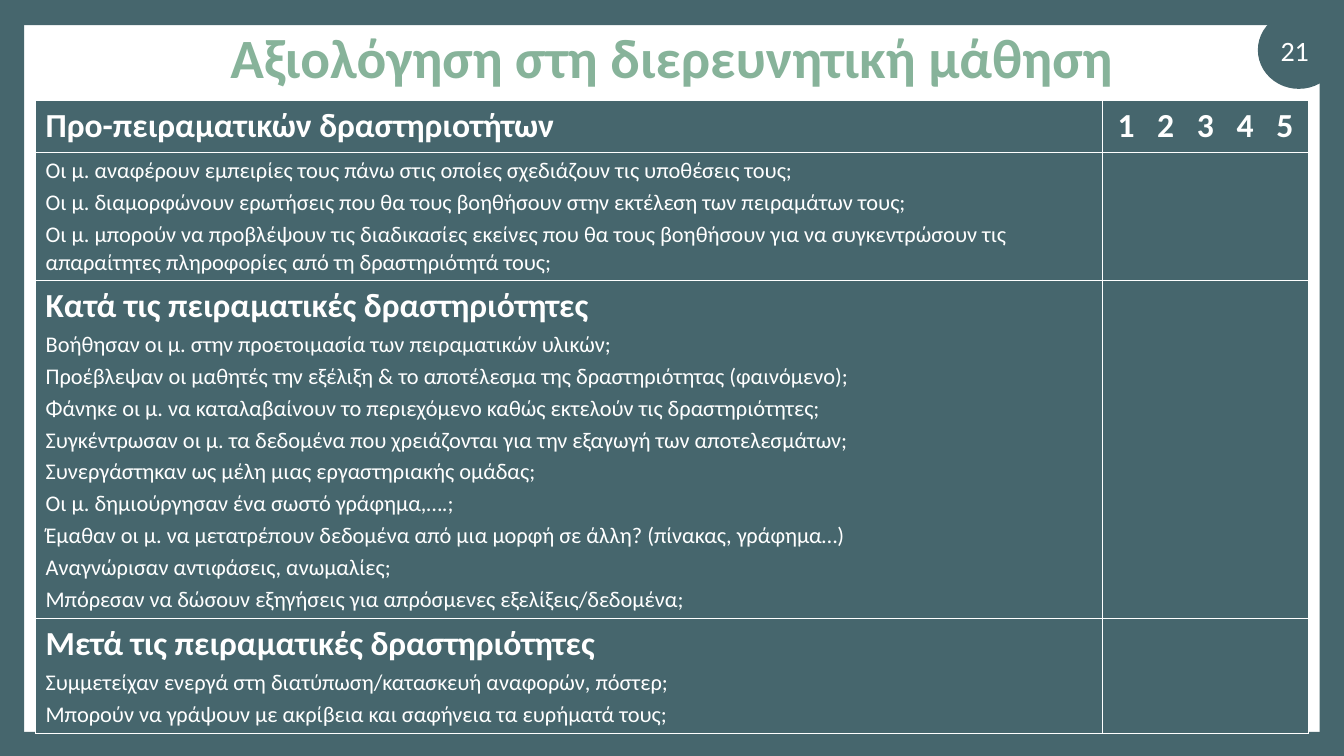
"""Build the slide on assessment in inquiry learning."""
from lxml.etree import SubElement
from pptx import Presentation
from pptx.dml.color import RGBColor
from pptx.enum.shapes import MSO_SHAPE
from pptx.enum.text import MSO_ANCHOR, PP_ALIGN
from pptx.oxml.ns import qn
from pptx.util import Pt

HUES = {"teal": "46666D", "mint": "87B39A", "white": "FFFFFF"}


def style(para, size, hue="white", bold=False):
    font = para.font
    font.name, font.size, font.bold = "Calibri", Pt(size), bold
    font.color.rgb = RGBColor.from_string(HUES[hue])


def paint(cell):
    cell.fill.solid()
    cell.fill.fore_color.rgb = RGBColor.from_string(HUES["teal"])
    props = cell._tc.get_or_add_tcPr()
    for spot, side in enumerate(("lnL", "lnR", "lnT", "lnB")):
        line = props.makeelement(qn(f"a:{side}"), {"w": str(Pt(1))})
        fill = SubElement(line, qn("a:solidFill"))
        SubElement(fill, qn("a:srgbClr"), val=HUES["white"])
        props.insert(spot, line)


deck = Presentation()
deck.slide_width, deck.slide_height = Pt(960), Pt(540)
slide = deck.slides.add_slide(deck.slide_layouts[5])
shapes = slide.shapes

frame = [
    (MSO_SHAPE.OVAL, 898.5, 8, 58.5, 55.5),
    (MSO_SHAPE.RECTANGLE, 0, 0, 960, 18),
    (MSO_SHAPE.RECTANGLE, 0, 522.7, 960, 17.3),
    (MSO_SHAPE.RECTANGLE, 942.7, 8.6, 17.3, 522.7),
    (MSO_SHAPE.RECTANGLE, 0, 8.6, 17.3, 522.7),
]
for kind, *box in frame:
    shape = shapes.add_shape(kind, *map(Pt, box))
    shape.shadow.inherit = False
    shape.fill.solid()
    shape.fill.fore_color.rgb = RGBColor.from_string(HUES["teal"])
    shape.line.fill.background()

title = shapes.title
title.left, title.top, title.width, title.height = Pt(66), Pt(21.6), Pt(828), Pt(43.2)
number = shapes.add_textbox(Pt(895.7), Pt(21.6), Pt(58.3), Pt(28.8))
heads = [
    (title, "Αξιολόγηση στη διερευνητική μάθηση", 39.6, "mint", True, 0.9),
    (number, "21", 20, "white", False, 1),
]
for box, text, size, hue, bold, space in heads:
    body = box.text_frame
    body.text, body.word_wrap = text, True
    body.vertical_anchor = MSO_ANCHOR.MIDDLE
    para = body.paragraphs[0]
    para.alignment, para.line_spacing = PP_ALIGN.CENTER, space
    style(para, size, hue, bold)

rows = [
    (37, "Προ-πειραματικών δραστηριοτήτων", []),
    (91.5, None, [
        "Οι μ. αναφέρουν εμπειρίες τους πάνω στις οποίες σχεδιάζουν τις υποθέσεις τους;",
        "Οι μ. διαμορφώνουν ερωτήσεις που θα τους βοηθήσουν στην εκτέλεση των πειραμάτων τους;",
        "Οι μ. μπορούν να προβλέψουν τις διαδικασίες εκείνες που θα τους βοηθήσουν για να "
        "συγκεντρώσουν τις απαραίτητες πληροφορίες από τη δραστηριότητά τους;",
    ]),
    (241.5, "Κατά τις πειραματικές δραστηριότητες", [
        "Βοήθησαν οι μ. στην προετοιμασία των πειραματικών υλικών;",
        "Προέβλεψαν οι μαθητές την εξέλιξη & το αποτέλεσμα της δραστηριότητας (φαινόμενο);",
        "Φάνηκε οι μ. να καταλαβαίνουν το περιεχόμενο καθώς εκτελούν τις δραστηριότητες;",
        "Συγκέντρωσαν οι μ. τα δεδομένα που χρειάζονται για την εξαγωγή των αποτελεσμάτων;",
        "Συνεργάστηκαν ως μέλη μιας εργαστηριακής ομάδας;",
        "Οι μ. δημιούργησαν ένα σωστό γράφημα,….;",
        "Έμαθαν οι μ. να μετατρέπουν δεδομένα από μια μορφή σε άλλη? (πίνακας, γράφημα…)",
        "Αναγνώρισαν αντιφάσεις, ανωμαλίες;",
        "Μπόρεσαν να δώσουν εξηγήσεις για απρόσμενες εξελίξεις/δεδομένα;",
    ]),
    (82, "Μετά τις πειραματικές δραστηριότητες", [
        "Συμμετείχαν ενεργά στη διατύπωση/κατασκευή αναφορών, πόστερ;",
        "Μπορούν να γράψουν με ακρίβεια και σαφήνεια τα ευρήματά τους;",
    ]),
]
total = sum(row[0] for row in rows)
table = shapes.add_table(len(rows), 2, Pt(25.4), Pt(72), Pt(909.2), Pt(total)).table
table.columns[0].width, table.columns[1].width = Pt(762.3), Pt(146.9)
for index, (height, head, items) in enumerate(rows):
    table.rows[index].height = Pt(height)
    cell = table.cell(index, 0)
    lines = ([head] if head else []) + items
    cell.text = "\n".join(lines)
    for spot, para in enumerate(cell.text_frame.paragraphs):
        main = lines[spot] == head
        style(para, 24 if main else 16, bold=main)
        para.space_before = Pt(3.2 if spot else 0)
    paint(cell)
    paint(table.cell(index, 1))

marks = table.cell(0, 1)
marks.text = "1 2 3 4 5"
para = marks.text_frame.paragraphs[0]
para.alignment = PP_ALIGN.CENTER
style(para, 24, bold=True)
para.runs[0]._r.get_or_add_rPr().set("spc", "540")

deck.save("out.pptx")
